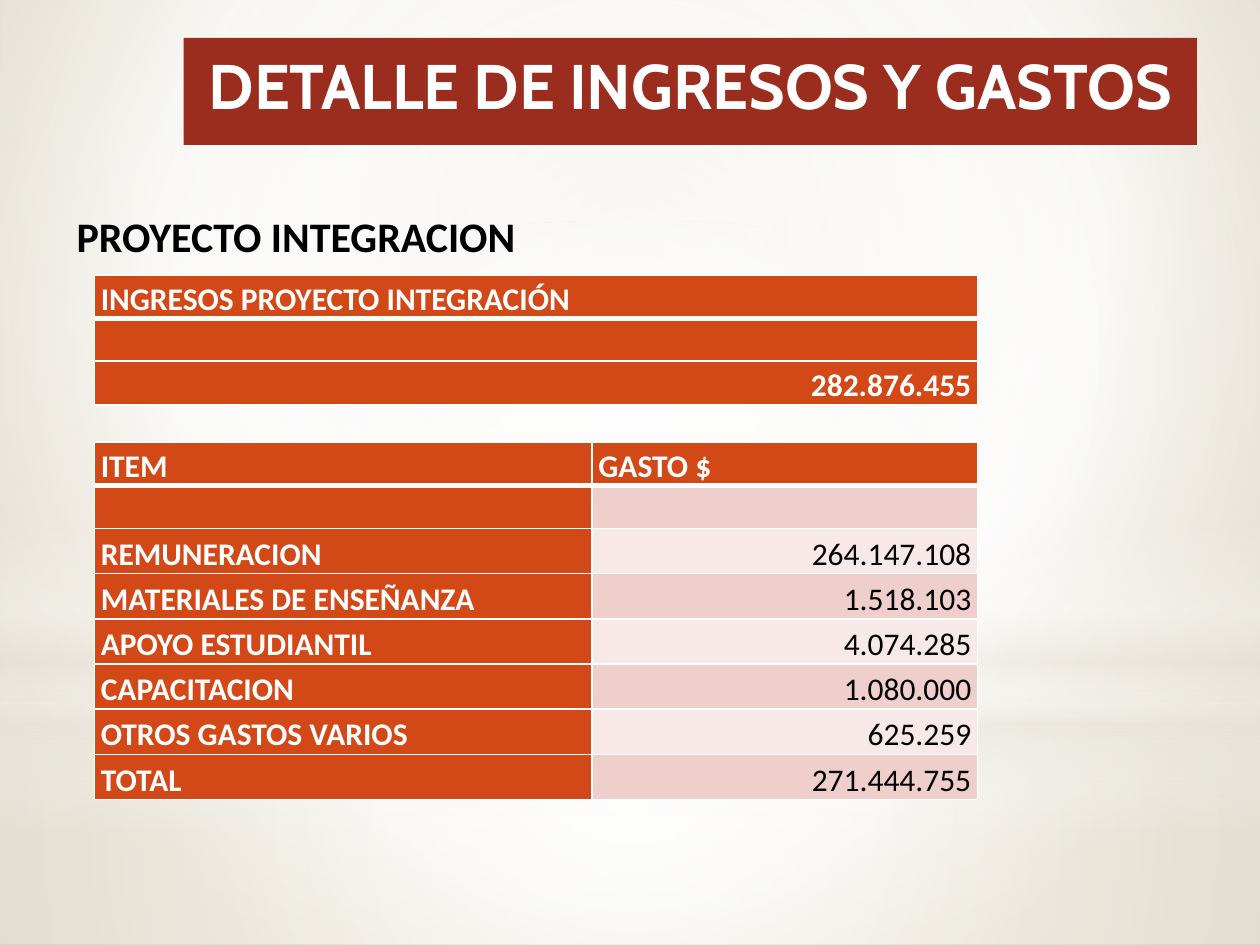
from dataclasses import dataclass

from lxml import etree
from pptx import Presentation
from pptx import util as u
from pptx.dml.color import RGBColor
from pptx.enum import shapes, text
from pptx.oxml import ns

Pt = u.Pt


@dataclass
class Theme:
    white: str = "FFFFFF"
    black: str = "000000"
    sand: str = "E9E5DC"
    brick: str = "9B2D1F"
    orange: str = "D34817"
    band_dark: str = "EFCFCC"
    band_light: str = "F7E9E8"
    title_font: str = "Cabin"
    body_font: str = "Calibri"
    title_size: int = 36
    heading_size: int = 24
    table_size: int = 18


theme = Theme()


def write(frame, words, size=theme.table_size, font=theme.body_font,
          color=theme.white, bold=True, align=text.PP_ALIGN.LEFT, spacing=None):
    """Put one formatted paragraph into a text frame."""
    para = frame.paragraphs[0]
    para.alignment = align
    para.line_spacing = spacing
    span = para.add_run()
    span.text = words
    span.font.size = Pt(size)
    span.font.name = font
    span.font.bold = bold
    span.font.color.rgb = RGBColor.from_string(color)


def set_gradient(element, stops, center=None, angle=90):
    """Swap the first solid fill for a gradient: circular if it has a center."""
    grad = etree.Element(ns.qn("a:gradFill"), rotWithShape="1")
    stop_list = etree.SubElement(grad, ns.qn("a:gsLst"))
    for position, color, opacity in stops:
        stop = etree.SubElement(stop_list, ns.qn("a:gs"), pos=str(position * 1000))
        shade = etree.SubElement(stop, ns.qn("a:srgbClr"), val=color)
        if opacity < 100:
            etree.SubElement(shade, ns.qn("a:alpha"), val=str(opacity * 1000))
    if center:
        circle = etree.SubElement(grad, ns.qn("a:path"), path="circle")
        sides = {side: str(value * 1000) for side, value in zip("ltrb", center)}
        etree.SubElement(circle, ns.qn("a:fillToRect"), **sides)
    else:
        etree.SubElement(grad, ns.qn("a:lin"), ang=str(angle * 60000), scaled="0")
    solid = next(element.iter(ns.qn("a:solidFill")))
    solid.getparent().replace(solid, grad)


deck = Presentation()
deck.slide_width, deck.slide_height = Pt(720), Pt(540)
page = deck.slides.add_slide(deck.slide_layouts[6])

# Background
page.background.fill.solid()
set_gradient(page.element, [(0, "E3DDCF", 100), (60, theme.white, 100),
                            (100, "CDBF9F", 100)], (20, 10, 20, 60))

# Soft light layers: kind, top, height, stops, center
middle = (50, 50, 50, 50)
rectangle, oval = shapes.MSO_SHAPE.RECTANGLE, shapes.MSO_SHAPE.OVAL
layers = [
    (rectangle, 402, 138, [(0, theme.white, 91), (37, theme.white, 76),
                           (100, theme.sand, 79)], middle),
    (rectangle, 0, 402, [(0, theme.white, 89), (48, theme.white, 62),
                         (100, theme.sand, 79)], middle),
    (rectangle, 297, 180, [(0, theme.white, 0), (29, theme.white, 30),
                           (45, theme.sand, 40), (55, theme.white, 26),
                           (65, theme.sand, 60), (100, theme.white, 0)], None),
    (oval, 126, 402, [(0, theme.white, 100), (56, theme.white, 0)], middle),
]
for kind, top, height, stops, center in layers:
    layer = page.shapes.add_shape(kind, 0, Pt(top), Pt(720), Pt(height))
    layer.shadow.inherit = False
    layer.line.fill.background()
    layer.fill.solid()
    set_gradient(layer.element, stops, center)

# Title band
band = page.shapes.add_shape(rectangle, Pt(105), Pt(21.6), Pt(579), Pt(61.2))
band.shadow.inherit = False
band.line.fill.background()
band.fill.solid()
band.fill.fore_color.rgb = RGBColor.from_string(theme.brick)
band.text_frame.word_wrap = True
band.text_frame.vertical_anchor = text.MSO_ANCHOR.TOP
band.text_frame.margin_top = Pt(5)
write(band.text_frame, "DETALLE DE INGRESOS Y GASTOS", size=theme.title_size,
      font=theme.title_font, align=text.PP_ALIGN.CENTER)

# Section heading
box = page.shapes.add_textbox(Pt(36.72), Pt(116.64), Pt(351.36), Pt(36))
box.text_frame.word_wrap = True
write(box.text_frame, "PROYECTO INTEGRACION", size=theme.heading_size, color=theme.black)

# Income and expense tables: top, column widths, row heights, rows
tables = [
    (157, [504.7], [24.5, 24.5, 25],
     [["INGRESOS PROYECTO INTEGRACIÓN"], [""], ["282.876.455"]]),
    (252.7, [284.4, 220.3], [24.5, 24.5] + [25.8] * 6,
     [["ITEM", "GASTO $"],
      ["", ""],
      ["REMUNERACION", "264.147.108"],
      ["MATERIALES DE ENSEÑANZA", "1.518.103"],
      ["APOYO ESTUDIANTIL", "4.074.285"],
      ["CAPACITACION", "1.080.000"],
      ["OTROS GASTOS VARIOS", "625.259"],
      ["TOTAL", "271.444.755"]]),
]
for top, widths, heights, rows in tables:
    table = page.shapes.add_table(len(rows), len(widths), Pt(54), Pt(top),
                                  Pt(sum(widths)), Pt(sum(heights))).table
    for column, width in zip(table.columns, widths):
        column.width = Pt(width)
    for r, (row, height) in enumerate(zip(rows, heights)):
        table.rows[r].height = Pt(height)
        for c, words in enumerate(row):
            cell = table.cell(r, c)
            cell.vertical_anchor = text.MSO_ANCHOR.BOTTOM
            cell.margin_left = cell.margin_right = Pt(3.6)
            cell.margin_top = cell.margin_bottom = 0

            # White borders, thick under the header row
            thick_side = {0: "lnB", 1: "lnT"}.get(r)
            for side in ("lnL", "lnR", "lnT", "lnB"):
                weight = Pt(3 if side == thick_side else 1)
                border = etree.SubElement(cell._tc.get_or_add_tcPr(),
                                          ns.qn(f"a:{side}"), w=str(weight))
                paint = etree.SubElement(border, ns.qn("a:solidFill"))
                etree.SubElement(paint, ns.qn("a:srgbClr"), val=theme.white)

            # Header row and first column are orange, the rest is banded
            strong = r == 0 or c == 0
            band_color = theme.band_dark if r % 2 else theme.band_light
            cell.fill.solid()
            cell.fill.fore_color.rgb = RGBColor.from_string(
                theme.orange if strong else band_color)
            if words:
                number = words[0].isdigit()
                write(cell.text_frame, words, bold=strong, spacing=1.15,
                      color=theme.white if strong else theme.black,
                      align=text.PP_ALIGN.RIGHT if number else text.PP_ALIGN.LEFT)

deck.save("out.pptx")
